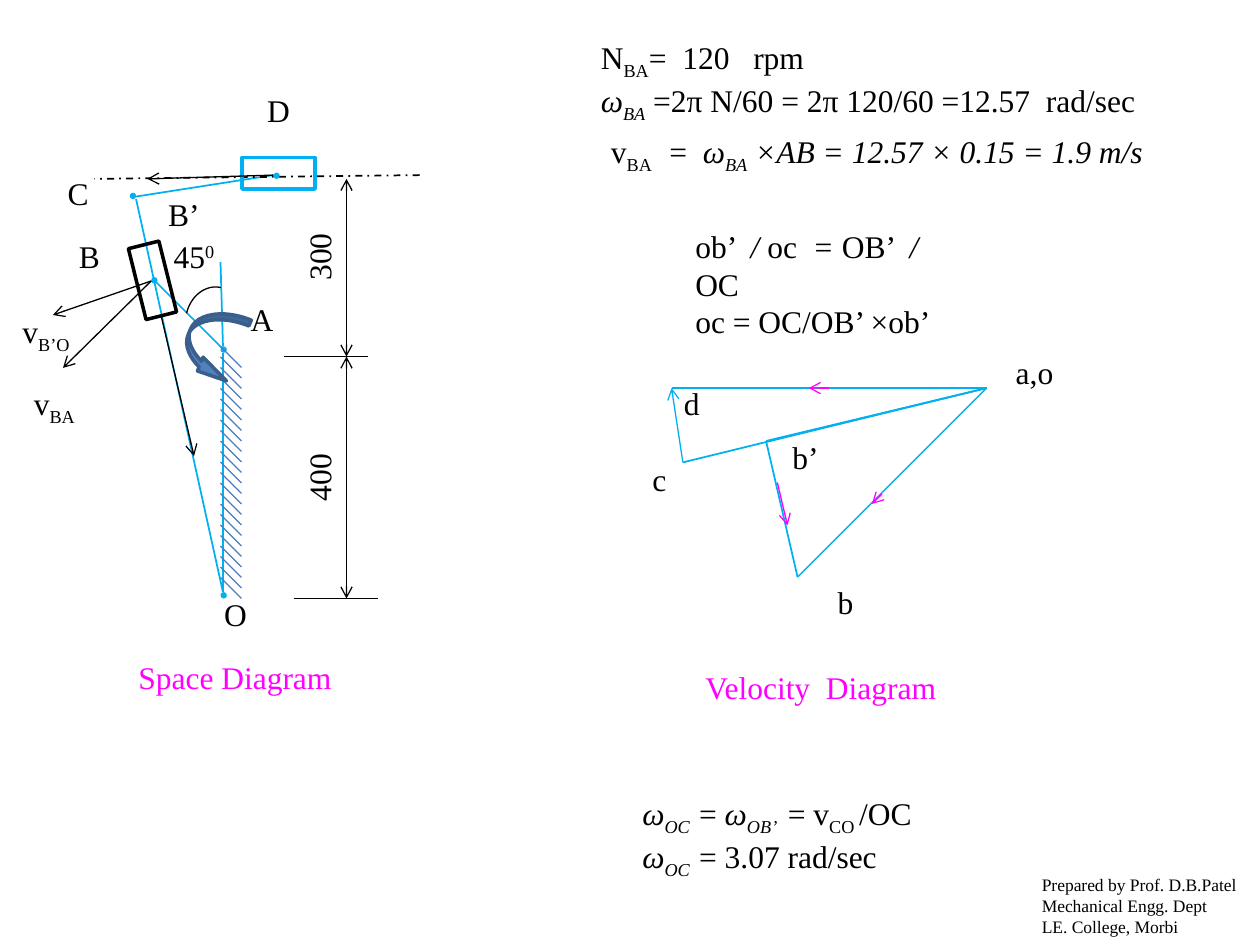
from typing import NamedTuple

from lxml.etree import SubElement
from pptx import Presentation
from pptx.dml.color import RGBColor
from pptx.enum.dml import MSO_LINE
from pptx.enum.shapes import MSO_CONNECTOR, MSO_SHAPE
from pptx.enum.text import MSO_AUTO_SIZE, PP_ALIGN
from pptx.oxml.ns import qn
from pptx.shapes.autoshape import Shape
from pptx.shapes.connector import Connector
from pptx.slide import Slide
from pptx.util import Inches, Pt

BLACK = RGBColor(0x00, 0x00, 0x00)
SKY = RGBColor(0x00, 0xB0, 0xF0)
MAGENTA = RGBColor(0xFF, 0x00, 0xFF)
HATCH = RGBColor(0x4B, 0x7E, 0xBC)
ARROW_FILL = RGBColor(0x4F, 0x81, 0xBD)
ARROW_EDGE = RGBColor(0x3A, 0x5F, 0x8C)
FONT = "Times New Roman"


class Segment(NamedTuple):
    start: tuple[float, float]
    end: tuple[float, float]
    color: RGBColor = BLACK
    weight: float = 0.75
    ends: tuple[str, ...] = ()
    dash: MSO_LINE | None = None


class Part(NamedTuple):
    preset: MSO_SHAPE
    box: tuple[float, float, float, float]
    fill: RGBColor | None = None
    edge: RGBColor | None = None
    weight: float = 2
    rotation: float = 0
    adjustments: tuple[float, ...] = ()


class Span(NamedTuple):
    text: str
    baseline: int = 0
    italic: bool = False


class Label(NamedTuple):
    box: tuple[float, float, float, float]
    lines: list[list[Span]]
    color: RGBColor = BLACK
    size: float = 18
    wrap: bool = False
    centered: bool = False
    rotation: float = 0


def sub(text: str, italic: bool = False) -> Span:
    return Span(text, -25000, italic)


def it(text: str) -> Span:
    return Span(text, 0, True)


def point_label(text: str, left: float, top: float, rotation: float = 0) -> Label:
    return Label((left, top, 0.58, 0.4), [[Span(text)]], wrap=True, centered=True, rotation=rotation)


def draw_segment(slide: Slide, segment: Segment) -> Connector:
    points = [Inches(value) for value in segment.start + segment.end]
    connector = slide.shapes.add_connector(MSO_CONNECTOR.STRAIGHT, *points)
    connector.line.color.rgb = segment.color
    connector.line.width = Pt(segment.weight)
    if segment.dash is not None:
        connector.line.dash_style = segment.dash
    properties = connector.element.spPr
    for end in segment.ends:
        SubElement(properties.find(qn("a:ln")), qn(f"a:{end}"), type="arrow")
    SubElement(properties, qn("a:effectLst"))
    return connector


def draw_part(slide: Slide, part: Part) -> Shape:
    shape = slide.shapes.add_shape(part.preset, *map(Inches, part.box))
    shape.shadow.inherit = False
    shape.rotation = part.rotation
    for index, value in enumerate(part.adjustments):
        shape.adjustments[index] = value
    if part.fill is None:
        shape.fill.background()
    else:
        shape.fill.solid()
        shape.fill.fore_color.rgb = part.fill
    if part.edge is None:
        shape.line.fill.background()
    else:
        shape.line.color.rgb = part.edge
        shape.line.width = Pt(part.weight)
    return shape


def draw_label(slide: Slide, label: Label) -> None:
    box = slide.shapes.add_textbox(*map(Inches, label.box))
    box.rotation = label.rotation
    frame = box.text_frame
    frame.word_wrap = label.wrap
    frame.auto_size = MSO_AUTO_SIZE.SHAPE_TO_FIT_TEXT
    frame.text = "\n" * (len(label.lines) - 1)
    for paragraph, spans in zip(frame.paragraphs, label.lines):
        paragraph.alignment = PP_ALIGN.CENTER if label.centered else PP_ALIGN.LEFT
        for span in spans:
            run = paragraph.add_run()
            run.text = span.text
            run.font.name = FONT
            run.font.size = Pt(label.size)
            run.font.color.rgb = label.color
            run.font.italic = span.italic
            if span.baseline:
                run.font._element.set("baseline", str(span.baseline))


TAIL = ("tailEnd",)
BOTH = ("headEnd", "tailEnd")
PIVOT = (1.2, 2.23)
POLE = (7.83, 3.08)
SLIDER_END = (1.28, 2.51)

LINKS = [
    Segment((1.77, 2.8), (1.77, 4.7), SKY, 1),
    Segment((2.17, 1.39), (1.08, 1.56), SKY, 1),
    Segment((3.33, 1.39), (0.75, 1.42), weight=1, dash=MSO_LINE.DASH_DOT),
    Segment((1.08, 1.58), (1.77, 4.7), SKY, 1),
    Segment((1.76, 2.76), (1.24, 2.24), SKY, 1),
    Segment((1.75, 2.08), (1.77, 2.75), SKY, 1),
]
DIMENSIONS = [
    Segment((2.25, 2.83), (2.92, 2.83)),
    Segment((2.33, 4.75), (3, 4.75)),
    Segment((2.75, 1.42), (2.75, 2.83), ends=BOTH),
    Segment((2.75, 2.83), (2.75, 4.75), ends=BOTH),
]
GROUND = [
    Segment((1.75, 2.75 + i / 12), (1.75 + 1 / 6, 2.75 + (i + 2) / 12), HATCH) for i in range(23)
]
VELOCITIES = [
    Segment(PIVOT, (0.5, 2.92), ends=TAIL),
    Segment(PIVOT, (0.42, 2.5), ends=TAIL),
    Segment((2.17, 1.39), (1.17, 1.42), ends=TAIL),
    Segment(POLE, (6.33, 4.58), SKY),
    Segment((7, 3.92), (6.92, 4), MAGENTA, ends=TAIL),
    Segment((6.08, 3.5), (6.33, 4.58), SKY, 1),
    Segment(POLE, (6.08, 3.5), SKY, 1),
    Segment((6.17, 3.83), (6.25, 4.17), MAGENTA, ends=TAIL),
    Segment(POLE, (5.42, 3.67), SKY, 1),
    Segment((5.33, 3.08), POLE, SKY),
    Segment((6.58, 3.08), (6.42, 3.08), MAGENTA, ends=TAIL),
    Segment((5.42, 3.67), (5.33, 3.08), SKY, ends=TAIL),
]
SLIDER_D = Part(MSO_SHAPE.RECTANGLE, (1.92, 1.25, 0.58, 0.25), edge=SKY)
SLIDER_B = Part(MSO_SHAPE.RECTANGLE, (0.92, 2.1, 0.58, 0.25), edge=BLACK, rotation=76)
JOINTS = [
    Part(MSO_SHAPE.OVAL, (left, top, 0.05, 0.05), fill=SKY)
    for left, top in [(1.2, 2.2), (1.75, 4.7), (1.75, 2.75), (1.03, 1.53), (2.17, 1.37)]
]
ANGLE = Part(MSO_SHAPE.ARC, (1.43, 2.32, 0.52, 0.43), None, BLACK, 0.75, 283.9, (161.529, 0.02))
ROTATION = Part(
    MSO_SHAPE.CURVED_RIGHT_ARROW, (1.48, 2.44, 0.42, 0.58),
    ARROW_FILL, ARROW_EDGE, 2, 22.2, (0.119, 0.281, 0.578),
)
LABELS = [
    point_label("O", 1.58, 4.67),
    point_label("A", 1.79, 2.33),
    point_label("B’", 1.17, 1.5),
    point_label("B", 0.42, 1.83),
    point_label("C", 0.33, 1.33),
    point_label("D", 1.92, 0.67),
    point_label("300", 2.24, 1.84, 270),
    point_label("400", 2.24, 3.59, 270),
    point_label("a,o", 7.92, 2.75),
    point_label("b", 6.42, 4.58),
    Label((1.25, 1.83, 0.58, 0.4), [[Span("45"), Span("0", 30000)]], wrap=True, centered=True),
    Label((0.17, 3, 0.56, 0.4), [[Span("v"), sub("BA")]]),
    Label((0.08, 2.43, 0.62, 0.4), [[Span("v"), sub("B’O")]]),
    Label((6.19, 3.43, 0.41, 0.4), [[Span("b’")]]),
    Label((5.08, 3.6, 0.31, 0.4), [[Span("c")]]),
    Label((5.33, 3, 0.33, 0.4), [[Span("d")]]),
    Label((1, 5.17, 1.75, 0.4), [[Span("Space Diagram")]], MAGENTA),
    Label((5.5, 5.25, 2.05, 0.4), [[Span("Velocity  Diagram")]], MAGENTA),
    Label((4.67, 0.25, 4.75, 0.71), [
        [Span("N"), sub("BA"), Span("=  120   rpm")],
        [it("ω"), sub("BA", True), Span(" =2π N/60 = 2π 120/60 =12.57  rad/sec")],
    ], wrap=True),
    Label((4.75, 1, 4.67, 0.4), [[
        Span("v"), sub("BA    "), Span("=  "), it("ω"), sub("BA", True),
        it(" ×AB = 12.57 × 0.15 = 1.9 m/s"),
    ]]),
    Label((5.42, 1.75, 2.36, 0.71), [
        [Span("ob’ "), it(" / "), Span("oc"), it("  = "), Span("OB’ "), it(" /"), Span(" OC")],
        [Span("oc = OC/OB’ ×ob’")],
    ]),
    Label((5, 6.25, 2.6, 0.71), [
        [it("ω"), sub("OC  ", True), Span("= "), it("ω"), sub("OB’ ", True),
         Span(" = v"), sub("CO "), Span("/OC")],
        [it("ω"), sub("OC  ", True), Span("= 3.07 rad/sec")],
    ]),
    Label((8.17, 6.89, 1.83, 0.61), [
        [Span("Prepared by Prof. D.B.Patel")],
        [Span("Mechanical Engg. Dept")],
        [Span("LE. College, Morbi")],
    ], size=10, wrap=True),
]


def main() -> None:
    presentation = Presentation()
    presentation.slide_width = Inches(10)
    presentation.slide_height = Inches(7.5)
    slide = presentation.slides.add_slide(presentation.slide_layouts[6])
    for link in LINKS:
        draw_segment(slide, link)
    for part in [SLIDER_D, *JOINTS, ANGLE]:
        draw_part(slide, part)
    slider_b = draw_part(slide, SLIDER_B)
    for segment in DIMENSIONS + GROUND:
        draw_segment(slide, segment)
    draw_part(slide, ROTATION)
    for velocity in VELOCITIES:
        draw_segment(slide, velocity)
    sliding = draw_segment(slide, Segment(SLIDER_END, (1.54, 3.62), ends=TAIL))
    sliding.begin_connect(slider_b, 3)
    sliding.begin_x, sliding.begin_y = map(Inches, SLIDER_END)
    for label in LABELS:
        draw_label(slide, label)
    presentation.save("out.pptx")


if __name__ == "__main__":
    main()
